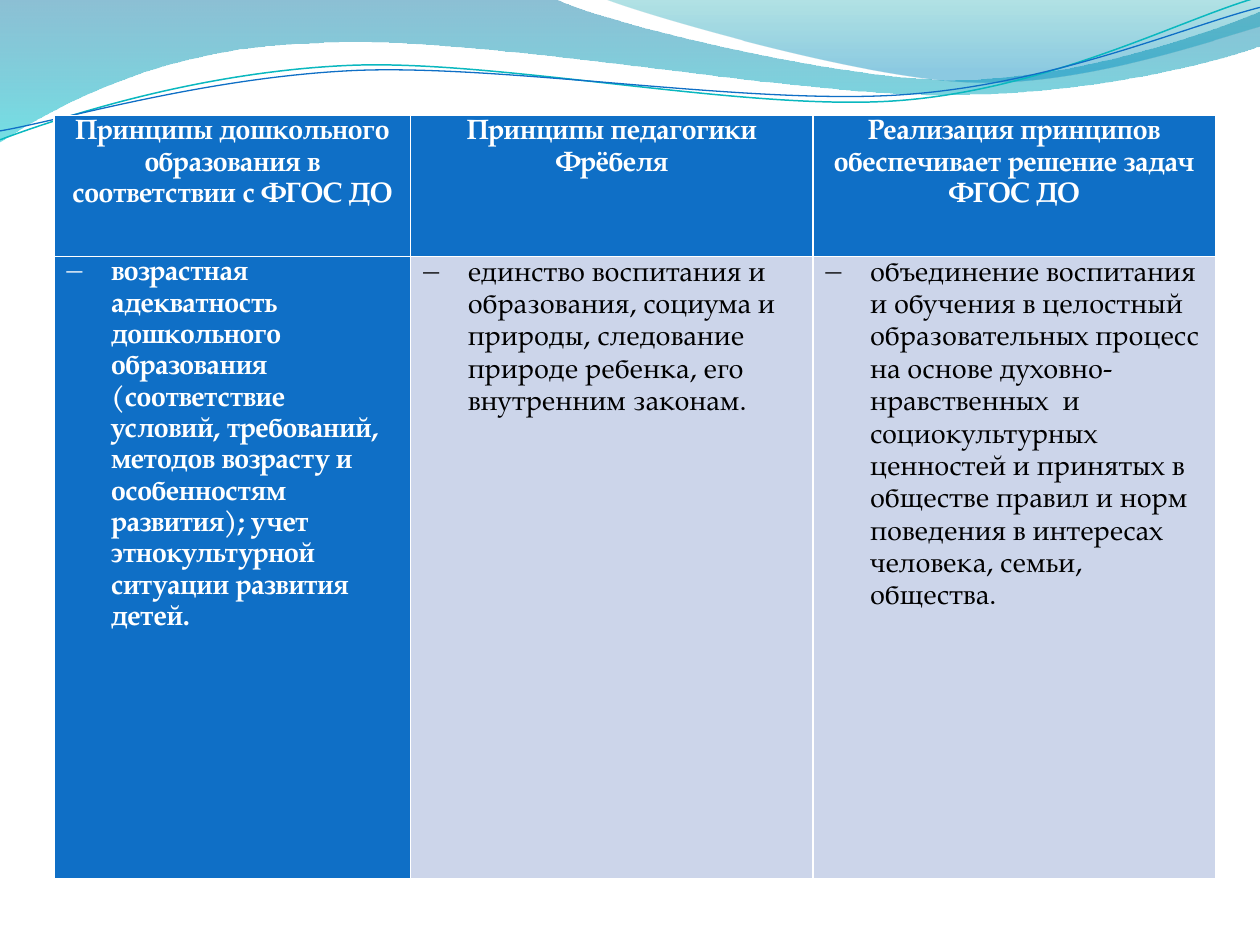
"""Builds a slide comparing preschool education principles under waves."""
from math import cos, radians, sin
from lxml.etree import SubElement
from pptx import Presentation
from pptx.dml.color import RGBColor
from pptx.enum.text import PP_ALIGN
from pptx.oxml.ns import qn
from pptx.util import Cm, Pt

FONT = "TeX Gyre Pagella"
WHITE = RGBColor(0xFF, 0xFF, 0xFF)
BLACK = RGBColor(0, 0, 0)
BLUE = RGBColor(0x0F, 0x6F, 0xC6)
PALE = RGBColor(0xCC, 0xD5, 0xEA)
TEAL = RGBColor(0x0A, 0xB8, 0xBF)
DEEP = RGBColor(0x00, 0x74, 0xA1)
AQUA = RGBColor(0x00, 0xC6, 0xCF)
GREEN = RGBColor(0x00, 0xA1, 0xA9)
SKY = RGBColor(0x00, 0x8B, 0xBF)

BACK_WAVE = [
    (0, 0), (11.18, -0.03),
    (12.09, 0.43, 16.87, 1.6, 19.25, 1.6), (21.67, 1.6, 24.33, 0.66, 25.4, 0.23),
    (25.43, 0.91),
    (24.97, 1.12, 22.1, 1.93, 18.95, 1.91), (15.8, 1.91, 9.7, 0.71, 6.53, 0.86),
    (3.28, 0.91, 1.17, 2.11, -0.03, 2.87), (0, 0),
]
FRONT_WAVE = [
    (12.17, -0.03),
    (12.93, 0.28, 17.32, 1.57, 19.53, 1.65), (21.74, 1.75, 24.41, 0.81, 25.4, 0.53),
    (25.4, 0), (12.17, -0.03),
]
TEAL_CURVE = [
    (0, 2.82),
    (1.22, 2.36, 4.01, 1.45, 7.04, 1.32), (10.03, 1.19, 15.06, 2.26, 18.11, 2.03),
    (21.16, 1.8, 23.83, 0.38, 25.35, -0.05),
]
BLUE_CURVE = [
    (0, 2.64),
    (1.19, 2.44, 4.17, 1.55, 7.19, 1.42), (10.24, 1.3, 15.16, 2.13, 18.21, 1.91),
    (21.23, 1.7, 23.9, 0.53, 25.4, 0.15),
]
ROWS = [
    ["Принципы дошкольного образования в соответствии с ФГОС ДО",
     "Принципы педагогики Фрёбеля",
     "Реализация принципов обеспечивает решение задач ФГОС ДО"],
    ["возрастная адекватность дошкольного образования (соответствие условий, "
     "требований, методов возрасту и особенностям развития); учет "
     "этнокультурной ситуации развития детей.",
     "единство воспитания и образования, социума и природы, следование "
     "природе ребенка, его внутренним законам.",
     "объединение воспитания и обучения в целостный образовательных процесс "
     "на основе духовно-нравственных  и социокультурных ценностей и принятых "
     "в обществе правил и норм поведения в интересах человека, семьи, общества."],
]


def turn(x, y, degrees, center=(12.7, 1.47)):
    a, dx, dy = radians(degrees), x - center[0], y - center[1]
    return (center[0] + dx * cos(a) - dy * sin(a),
            center[1] + dx * sin(a) + dy * cos(a))


class Deck:
    def __init__(self, prs, font, size):
        self.font, self.size = font, size
        self.slide = prs.slides.add_slide(prs.slide_layouts[6])

    def outline(self, path, close, rotation=0):
        points = []
        for seg in path:
            for x, y in zip(seg[::2], seg[1::2]):
                points.append(tuple(Cm(v) for v in turn(x, y, -rotation)))
        builder = self.slide.shapes.build_freeform(*points[0])
        builder.add_line_segments(points[1:], close=close)
        sp = builder.convert_to_shape()
        sp.shadow.inherit = False
        sp.rotation = rotation
        lines = iter(list(sp._element.iter(qn("a:lnTo"))))
        for seg in path[1:]:
            line = next(lines)
            if len(seg) == 6:
                line.tag = qn("a:cubicBezTo")
                for extra in (next(lines), next(lines)):
                    line.append(extra[0])
                    extra.getparent().remove(extra)
        return sp

    def wave(self, path, stops):
        sp = self.outline(path, True)
        sp.line.fill.background()
        sp.fill.gradient()
        sp.fill.gradient_angle = 270
        for stop, (position, color, _) in zip(sp.fill.gradient_stops, stops):
            stop.position = position
            stop.color.rgb = color
        for clr, (_, _, opacity) in zip(sp._element.spPr.iter(qn("a:srgbClr")), stops):
            SubElement(clr, qn("a:alpha"), val=str(opacity * 1000))

    def curve(self, path, color, width):
        sp = self.outline(path, False, 357.3)
        sp.fill.background()
        sp.line.color.rgb = color
        sp.line.width = Pt(width)

    def cell(self, cell, text, fill, color, bulleted):
        cell.fill.solid()
        cell.fill.fore_color.rgb = fill
        cell.margin_left = cell.margin_right = Cm(0.19)
        cell.margin_top = cell.margin_bottom = 0
        p = cell.text_frame.paragraphs[0]
        p.text = text
        p.line_spacing = 1.15
        if bulleted:
            p_pr = p._p.get_or_add_pPr()
            p_pr.set("marL", str(Cm(0.96)))
            p_pr.set("indent", str(-Cm(0.96)))
            SubElement(p_pr, qn("a:buChar"), char="−")
        else:
            p.alignment = PP_ALIGN.CENTER
        font = p.runs[0].font
        font.name, font.size = self.font, self.size
        font.bold = color == WHITE
        font.color.rgb = color

    def table(self, rows, left, top, widths, heights, height):
        frame = self.slide.shapes.add_table(
            len(rows), len(widths), Cm(left), Cm(top), Cm(sum(widths)), Cm(height))
        table = frame.table
        table.first_col = True
        for column, width in zip(table.columns, widths):
            column.width = Cm(width)
        for r, (row, row_height) in enumerate(zip(rows, heights)):
            table.rows[r].height = Cm(row_height)
            for c, text in enumerate(row):
                strong = r == 0 or c == 0
                self.cell(table.cell(r, c), text, BLUE if strong else PALE,
                          WHITE if strong else BLACK, r > 0)
        frame.height = Cm(height)


def main():
    prs = Presentation()
    prs.slide_width, prs.slide_height = Cm(25.4), Cm(19.05)
    deck = Deck(prs, FONT, Pt(16))
    deck.wave(BACK_WAVE, [(0, DEEP, 45), (1, AQUA, 55)])
    deck.wave(FRONT_WAVE, [(0, GREEN, 30), (0.8, SKY, 45)])
    deck.curve(TEAL_CURVE, TEAL, 0.85)
    deck.curve(BLUE_CURVE, BLUE, 0.75)
    deck.table(ROWS, 1.09, 2.33, [7.19, 8.11, 8.11], [2.84, 12.55], 15.67)
    prs.save("out.pptx")


if __name__ == "__main__":
    main()
